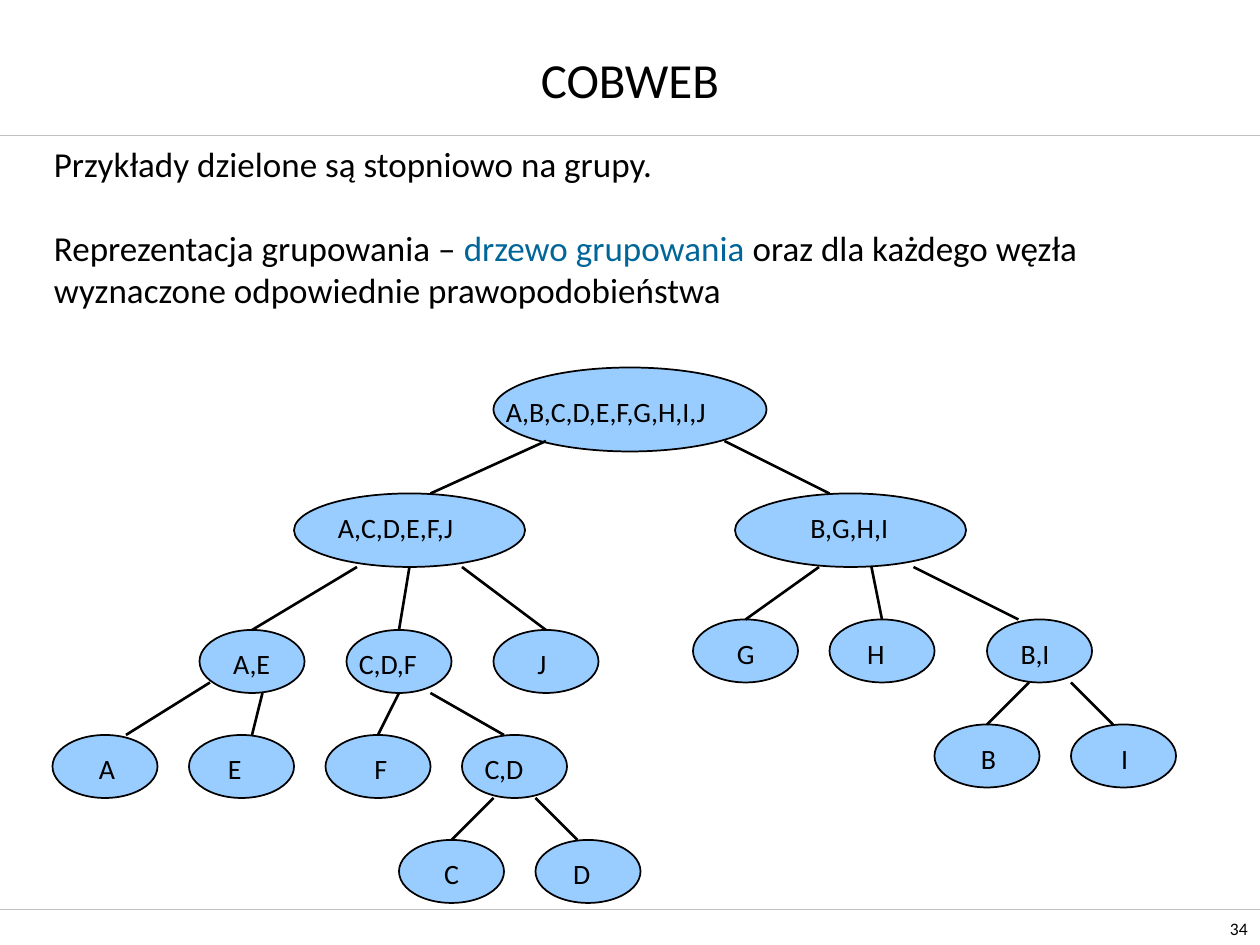
from collections import namedtuple
from dataclasses import dataclass

from lxml import etree
from pptx import Presentation
from pptx.dml.color import RGBColor
from pptx.enum import shapes, text
from pptx.oxml import ns
from pptx.util import Inches, Pt


@dataclass(frozen=True)
class Theme:
    font: str = "Calibri"
    ink: str = "000000"
    accent: str = "006699"
    node: str = "99CCFF"
    rule: str = "C0C0C0"
    title: int = 28
    body: int = 20
    label: int = 16
    number: int = 10
    rule_width: float = 0.25
    outline: float = 1
    branch: float = 1.5


THEME = Theme()
Box = namedtuple("Box", "left top width height")
Node = namedtuple("Node", "name column row width height label_left label_width")

UNIT = 1 / 12  # tree grid step in inches
LEAF = (10, 6)
BRANCH = (22, 7)

# Grid place and size in units; label offset and width in inches
NODES = [
    Node("A,B,C,D,E,F,G,H,I,J", 42, 0, 26, 8, 0, 2.17),
    Node("A,C,D,E,F,J", 23, 12, *BRANCH, 0.25, 1.38),
    Node("B,G,H,I", 65, 12, *BRANCH, 0.5, 0.93),
    Node("A,E", 14, 25, *LEAF, 0.17, 0.56),
    Node("C,D,F", 28, 25, *LEAF, 0, 0.78),
    Node("J", 42, 25, *LEAF, 0.25, 0.31),
    Node("G", 61, 24, *LEAF, 0.25, 0.38),
    Node("H", 74, 24, *LEAF, 0.2, 0.36),
    Node("B,I", 89, 24, *LEAF, 0.17, 0.47),
    Node("B", 84, 34, *LEAF, 0.27, 0.35),
    Node("I", 97, 34, *LEAF, 0.3, 0.26),
    Node("F", 26, 35, *LEAF, 0.29, 0.34),
    Node("C,D", 39, 35, *LEAF, 0.08, 0.58),
    Node("A", 0, 35, *LEAF, 0.27, 0.35),
    Node("E", 13, 35, *LEAF, 0.21, 0.35),
    Node("C", 33, 45, *LEAF, 0.26, 0.36),
    Node("D", 46, 45, *LEAF, 0.2, 0.36),
]

# (parent row, child row): pairs of parent and child columns
EDGES = {
    (7, 12): [(47, 36), (64, 74)],
    (19, 25): [(29, 19), (34, 33), (39, 47)],
    (19, 24): [(73, 66), (78, 79), (82, 92)],
    (30, 35): [(15, 7)],
    (31, 35): [(20, 19), (33, 31), (36, 43)],
    (30, 34): [(93, 89), (97, 101)],
    (41, 45): [(42, 38), (46, 50)],
}


def rgb(value):
    return RGBColor.from_string(value)


def style(span, size, color=THEME.ink):
    span.font.name = THEME.font
    span.font.size = Pt(size)
    span.font.color.rgb = rgb(color)


def add_text(parent, box, words, size, align=text.PP_ALIGN.LEFT,
             anchor=text.MSO_ANCHOR.TOP, wrap=True):
    """Paragraphs are lists of (text, colour) spans."""
    frame = parent.shapes.add_textbox(*map(Inches, box)).text_frame
    frame.word_wrap = wrap
    frame.vertical_anchor = anchor
    for index, spans in enumerate(words):
        para = frame.add_paragraph() if index else frame.paragraphs[0]
        para.alignment = align
        for part, color in spans:
            span = para.add_run()
            span.text = part
            style(span, size, color)
    return frame


def add_line(parent, start, end, color, width):
    line = parent.shapes.add_connector(
        shapes.MSO_CONNECTOR.STRAIGHT, *map(Inches, (*start, *end)))
    line.line.color.rgb = rgb(color)
    line.line.width = Pt(width)
    etree.SubElement(line._element.spPr, ns.qn("a:effectLst"))


def add_frame(page, box):
    """Rules across the page and the slide number."""
    bottom = box.top + box.height
    right = box.left + box.width
    for y in (box.top, bottom):
        add_line(page, (box.left, y), (right, y), THEME.rule, THEME.rule_width)
    add_text(page, Box(right - 0.51, bottom, 0.51, 0.28), [[("34", THEME.ink)]],
             THEME.number, text.PP_ALIGN.RIGHT, text.MSO_ANCHOR.BOTTOM)


def add_title(page, box):
    add_text(page, box, [[("COBWEB", THEME.ink)]], THEME.title,
             text.PP_ALIGN.CENTER, text.MSO_ANCHOR.MIDDLE)


def add_body(page, box):
    frame = add_text(page, box, [
        [("Przykłady dzielone są stopniowo na grupy.", THEME.ink)],
        [("Reprezentacja grupowania – ", THEME.ink),
         ("drzewo grupowania", THEME.accent),
         (" oraz dla każdego węzła wyznaczone odpowiednie prawopodobieństwa",
          THEME.ink)],
    ], THEME.body)
    frame.paragraphs[1].space_before = Pt(24)


def add_node(tree, box, node):
    oval = tree.shapes.add_shape(shapes.MSO_SHAPE.OVAL, *map(Inches, box))
    oval.shadow.inherit = False
    oval.fill.solid()
    oval.fill.fore_color.rgb = rgb(THEME.node)
    oval.line.color.rgb = rgb(THEME.ink)
    oval.line.width = Pt(THEME.outline)
    drop = UNIT * (1 if node.height < 8 else 2)
    label = Box(box.left + node.label_left, box.top + drop, node.label_width, 0.37)
    add_text(tree, label, [[(node.name, THEME.ink)]], THEME.label, wrap=False)


def add_tree(page, box):
    tree = page.shapes.add_group_shape()

    def place(column, row):
        return box.left + column * UNIT, box.top + row * UNIT

    # Nodes
    for node in NODES:
        oval = Box(*place(node.column, node.row),
                   node.width * UNIT, node.height * UNIT)
        add_node(tree, oval, node)

    # Branches
    for (upper, lower), pairs in EDGES.items():
        for parent, child in pairs:
            add_line(tree, place(parent, upper), place(child, lower),
                     THEME.ink, THEME.branch)


def main():
    deck = Presentation()
    deck.slide_width, deck.slide_height = Inches(10), Inches(7.5)
    page = deck.slides.add_slide(deck.slide_layouts[6])
    add_frame(page, Box(0, 1.07, 10, 6.15))
    add_body(page, Box(0.33, 1.08, 9.33, 1.43))
    add_tree(page, Box(5 * UNIT, 35 * UNIT, 107 * UNIT, 51 * UNIT))
    add_title(page, Box(0.75, 0, 8.5, 1.25))
    deck.save("out.pptx")


if __name__ == "__main__":
    main()
